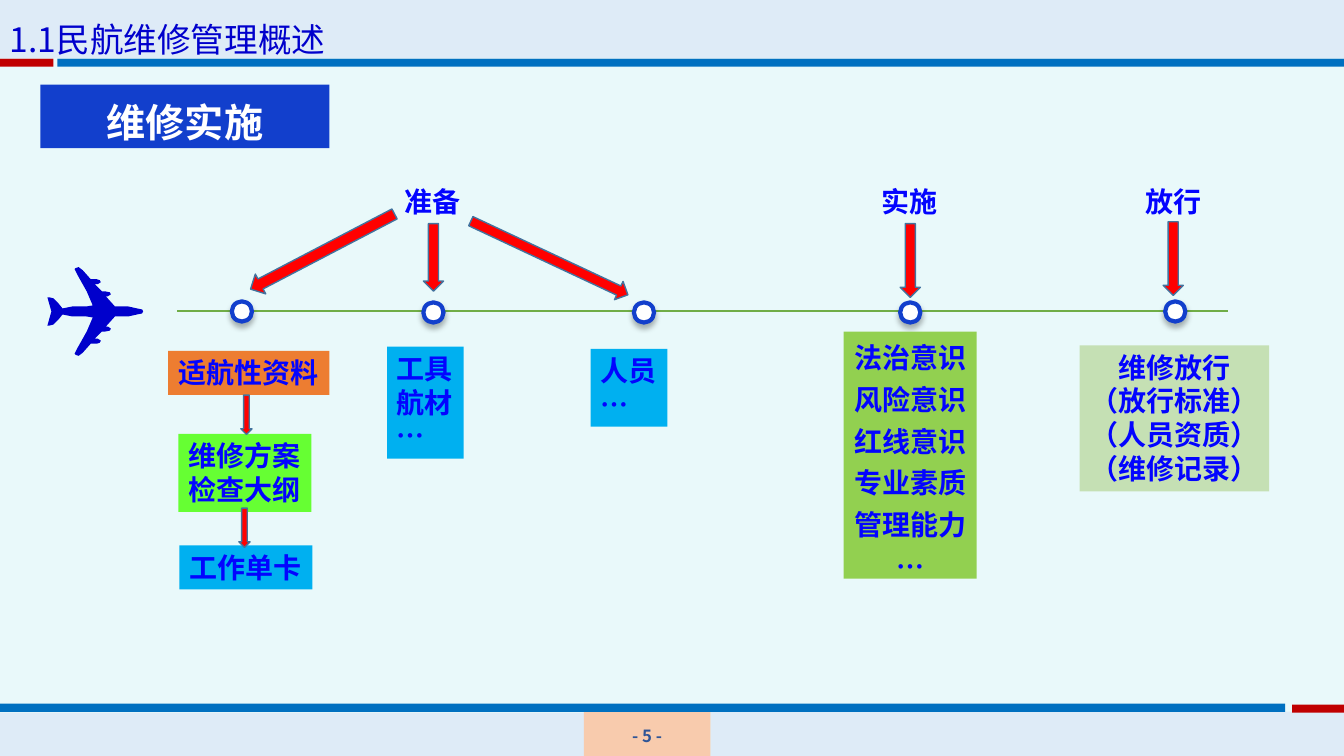
import math

from lxml import etree
from pptx import Presentation
from pptx.dml.color import RGBColor
from pptx.enum.shapes import MSO_CONNECTOR, MSO_SHAPE
from pptx.enum.text import MSO_ANCHOR, PP_ALIGN
from pptx.oxml.ns import qn
from pptx.util import Pt

RECT, OVAL, ARROW = MSO_SHAPE.RECTANGLE, MSO_SHAPE.OVAL, MSO_SHAPE.RIGHT_ARROW
LINE = MSO_CONNECTOR.STRAIGHT
LEFT, CENTER = PP_ALIGN.LEFT, PP_ALIGN.CENTER
TOP, MIDDLE = MSO_ANCHOR.TOP, MSO_ANCHOR.MIDDLE

FONT = "Noto Sans CJK SC"
BACK = RGBColor(0xE9, 0xF9, 0xFA)
BAND = RGBColor(0xDE, 0xEB, 0xF7)
BAR = RGBColor(0x00, 0x70, 0xC0)
DARK = RGBColor(0xC0, 0x00, 0x00)
PEACH = RGBColor(0xF8, 0xCB, 0xAD)
SLATE = RGBColor(0x2F, 0x55, 0x97)
NAVY = RGBColor(0x00, 0x00, 0xCC)
BLUE = RGBColor(0x03, 0x04, 0xFF)
ROYAL = RGBColor(0x12, 0x3F, 0xCC)
WHITE = RGBColor(0xFF, 0xFF, 0xFF)
ORANGE = RGBColor(0xED, 0x7D, 0x31)
SKY = RGBColor(0x00, 0xB0, 0xF0)
LIME = RGBColor(0x66, 0xFF, 0x33)
GREEN = RGBColor(0x92, 0xD0, 0x50)
PALE = RGBColor(0xC5, 0xE0, 0xB4)
TRACK = RGBColor(0x70, 0xAD, 0x47)
RED = RGBColor(0xFF, 0x00, 0x00)
EDGE = RGBColor(0x43, 0x73, 0x9E)

AXIS = 309
WING = [(142, 309), (141, 307), (136, 306), (127, 304), (114, 304),
        (105, 294), (107, 294), (110, 292), (109, 290), (104, 289),
        (101, 289), (94, 282), (97, 282), (100, 280), (99, 278),
        (96, 277), (90, 277), (82, 268), (78, 265), (75, 266), (74, 267),
        (77, 273), (86, 289), (92, 303), (86, 304), (72, 304), (62, 306),
        (58, 301), (53, 296), (49, 295), (47, 295), (51, 309)]


def paint(shape, fill, edge=None, width=1):
    shape.shadow.inherit = False
    shape.fill.solid()
    shape.fill.fore_color.rgb = fill
    if edge is None:
        shape.line.fill.background()
    else:
        shape.line.color.rgb = edge
        shape.line.width = Pt(width)


def block(slide, kind, spot, fill, edge=None, width=1):
    shape = slide.shapes.add_shape(kind, *map(Pt, spot))
    paint(shape, fill, edge, width)
    return shape


def write(slide, spot, text, fill=None, size=20, color=BLUE, bold=True,
          align=LEFT, anchor=TOP, wrap=False, pitch=24, inset=None):
    if fill is None:
        shape = slide.shapes.add_textbox(*map(Pt, spot))
    else:
        shape = block(slide, RECT, spot, fill)
    frame = shape.text_frame
    frame.word_wrap = wrap
    frame.vertical_anchor = anchor
    if inset is not None:
        frame.margin_left = frame.margin_right = Pt(inset)
        frame.margin_top = frame.margin_bottom = Pt(inset)
    frame.text = text
    for para in frame.paragraphs:
        para.alignment = align
        para.line_spacing = Pt(pitch)
        for run in para.runs:
            font = run.font
            font.name = FONT
            font.size = Pt(size)
            font.bold = bold
            font.color.rgb = color
            etree.SubElement(run._r.get_or_add_rPr(), qn("a:ea"), typeface=FONT)


def arrow(slide, x1, y1, x2, y2, width=14.4):
    span = math.hypot(x2 - x1, y2 - y1)
    spot = ((x1 + x2 - span) / 2, (y1 + y2 - width) / 2, span, width)
    shape = block(slide, ARROW, spot, RED, EDGE)
    shape.rotation = math.degrees(math.atan2(y2 - y1, x2 - x1)) % 360


def node(slide, x, y):
    size = 14.4
    spot = (x - size / 2, y - size / 2, size, size)
    shape = block(slide, OVAL, spot, WHITE, ROYAL, 3)
    effect = shape._element.spPr.find(qn("a:effectLst"))
    shade = etree.SubElement(effect, qn("a:outerShdw"), blurRad=str(Pt(4)),
                             dist=str(Pt(3)), dir="5400000", rotWithShape="0")
    tint = etree.SubElement(shade, qn("a:srgbClr"), val="000000")
    etree.SubElement(tint, qn("a:alpha"), val="29000")


def plane(slide):
    lower = [(x, 2 * AXIS - y) for x, y in reversed(WING[1:-1])]
    pen = slide.shapes.build_freeform(*WING[0], scale=Pt(0.72))
    pen.add_line_segments(WING[1:] + lower, close=True)
    paint(pen.convert_to_shape(), NAVY)


def track(slide):
    line = slide.shapes.add_connector(LINE, Pt(126.7), Pt(222.3), Pt(877), Pt(222.3))
    line.line.color.rgb = TRACK
    line.line.width = Pt(1.5)
    etree.SubElement(line._element.spPr, qn("a:effectLst"))


def frame(slide):
    for spot, fill in [
        ((41, 41.8, 919, 5.8), BAR),
        ((0, 41.8, 38.2, 5.8), DARK),
        ((0, 509, 417, 31), BAND),
        ((417, 508.3, 90.7, 31.7), PEACH),
        ((0, 0, 960, 41.8), BAND),
        ((507.6, 508.3, 452.4, 31.7), BAND),
        ((0, 502.6, 918, 5.8), BAR),
        ((923, 503.3, 37, 5.8), DARK),
    ]:
        block(slide, RECT, spot, fill)
    write(slide, (432.7, 514.8, 59, 21.6), "- 5 -", size=12, color=SLATE,
          align=CENTER, anchor=MIDDLE, pitch=15)
    write(slide, (0, 10, 346, 25), "1.1民航维修管理概述", size=24,
          color=NAVY, bold=False, wrap=True, pitch=29)
    write(slide, (28.8, 60.5, 206.6, 45.4), "维修实施", ROYAL, size=28,
          color=WHITE, align=CENTER, wrap=True, pitch=40)


def main():
    deck = Presentation()
    deck.slide_width, deck.slide_height = Pt(960), Pt(540)
    slide = deck.slides.add_slide(deck.slide_layouts[6])
    slide.background.fill.solid()
    slide.background.fill.fore_color.rgb = BACK

    frame(slide)
    track(slide)
    plane(slide)
    for x, y in [(172.8, 222.5), (309.6, 223.2), (460, 223.2),
                 (650.2, 223.2), (839.5, 222.5)]:
        node(slide, x, y)

    for x, text in [(282.2, "准备"), (622.8, "实施"), (811.4, "放行")]:
        write(slide, (x, 128.2, 54.7, 31.5), text)

    for spot, text, fill in [
        ((120.2, 250.6, 115.2, 31.5), "适航性资料", ORANGE),
        ((127.4, 310, 95, 55.6), "维修方案\n检查大纲", LIME),
        ((128.2, 389.5, 95, 31.5), "工作单卡", SKY),
        ((276.5, 247.7, 54.7, 80), "工具\n航材\n…", SKY),
        ((422, 249.1, 54.7, 55.6), "人员\n…", SKY),
    ]:
        write(slide, spot, text, fill)
    write(slide, (602.6, 236.9, 95, 176.4),
          "法治意识\n风险意识\n红线意识\n专业素质\n管理能力\n…",
          GREEN, align=CENTER, wrap=True, pitch=30, inset=0)
    write(slide, (771.1, 246.6, 135.4, 104.4),
          "维修放行\n（放行标准）\n（人员资质）\n（维修记录）",
          PALE, align=CENTER)

    arrow(slide, 281.8, 152.8, 179, 206.5, 16)
    arrow(slide, 336.3, 158, 448.5, 210.6)
    for x, top, end, width in [
        (309.6, 159.8, 208, 14.4), (650.2, 159.8, 212.4, 14.4),
        (838, 158.4, 211, 14.4), (176, 282.2, 310.3, 8),
        (174.6, 363, 391, 8),
    ]:
        arrow(slide, x, top, x, end, width)
    deck.save("out.pptx")


if __name__ == "__main__":
    main()
